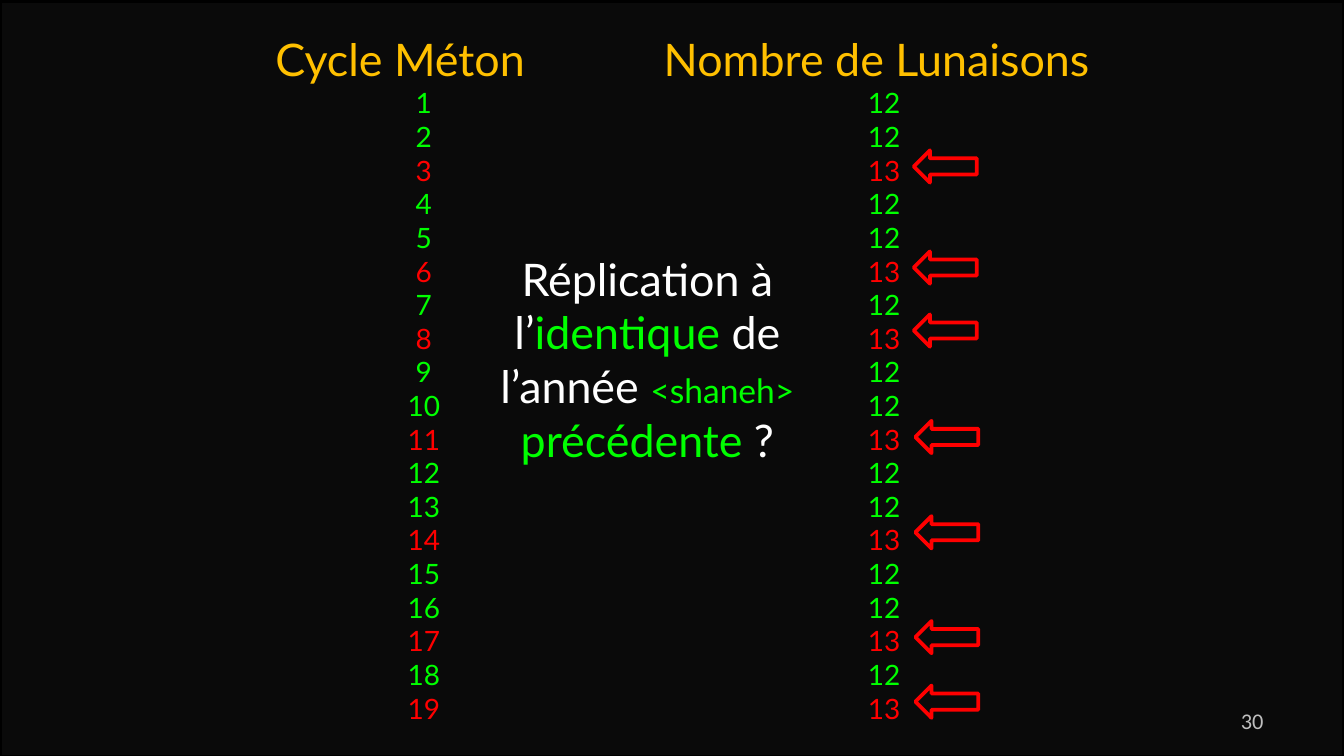
"""Build the slide comparing the Metonic cycle years with their number of lunations."""
import dataclasses
import typing

import lxml.etree
import pptx
import pptx.dml.color
import pptx.enum.shapes
import pptx.enum.text
import pptx.oxml.ns
import pptx.util

Cm = pptx.util.Cm
Pt = pptx.util.Pt
Align = pptx.enum.text.PP_ALIGN
Anchor = pptx.enum.text.MSO_ANCHOR
Preset = pptx.enum.shapes.MSO_SHAPE


@dataclasses.dataclass(frozen=True)
class Theme:
    """Colours, fonts and type sizes of the slide."""

    backdrop: str = "0A0A0A"
    border: str = "000000"
    heading: str = "FFC000"
    common: str = "00FF00"
    leap: str = "FF0000"
    question: str = "FFFFFF"
    number: str = "BFBFBF"
    font: str = "Lato"
    number_font: str = "Calibri"
    large: int = 24
    medium: int = 18
    row: int = 15
    small: int = 12
    line: int = 2


class Frame(typing.NamedTuple):
    """Position and size in centimetres."""

    left: float
    top: float
    width: float
    height: float


class Span(typing.NamedTuple):
    """A piece of text with one look."""

    text: str
    size: int
    colour: str
    font: str


class Column(typing.NamedTuple):
    """A headed list with one value per year."""

    heading: str
    frame: Frame
    values: list[int]


class Arrow(typing.NamedTuple):
    """A marker beside a leap year."""

    year: int
    left: float
    top: float


THEME = Theme()
ARROWS = [
    Arrow(3, 17.27, 2.84),
    Arrow(6, 17.27, 4.75),
    Arrow(8, 17.27, 5.94),
    Arrow(11, 17.3, 7.95),
    Arrow(14, 17.3, 9.75),
    Arrow(17, 17.3, 11.73),
    Arrow(19, 17.3, 12.95),
]
LEAP_YEARS = {arrow.year for arrow in ARROWS}
YEARS = list(range(1, 20))
COLUMNS = [
    Column("Cycle Méton", Frame(4.95, 0.48, 6.12, 13.46), YEARS),
    Column(
        "Nombre de Lunaisons",
        Frame(12.29, 0.48, 8.84, 13.46),
        [13 if year in LEAP_YEARS else 12 for year in YEARS],
    ),
]
QUESTION = [
    Span("Réplication à l’", THEME.large, THEME.question, THEME.font),
    Span("identique", THEME.large, THEME.common, THEME.font),
    Span(" de l’année ", THEME.large, THEME.question, THEME.font),
    Span("<shaneh> ", THEME.medium, THEME.common, THEME.font),
    Span("précédente", THEME.large, THEME.common, THEME.font),
    Span(" ?", THEME.large, THEME.question, THEME.font),
]


def apply(target: typing.Any, values: dict[str, typing.Any]) -> None:
    """Set every named attribute of the target."""
    for name, value in values.items():
        setattr(target, name, value)


def rgb(colour: str) -> pptx.dml.color.RGBColor:
    """Turn a hexadecimal colour into an RGB value."""
    return pptx.dml.color.RGBColor.from_string(colour)


def place(box: typing.Any, frame: Frame, anchor: Anchor = Anchor.TOP) -> None:
    """Position a text shape and prepare its text frame."""
    apply(box, {name: Cm(value) for name, value in frame._asdict().items()})
    apply(box.text_frame, {
        "word_wrap": True,
        "auto_size": pptx.enum.text.MSO_AUTO_SIZE.NONE,
        "vertical_anchor": anchor,
    })


def write(para: typing.Any, spans: list[Span], alignment: Align) -> None:
    """Fill a paragraph with spans, without bullet or indent."""
    apply(para, {"alignment": alignment, "space_before": Pt(0), "line_spacing": 1.0})
    properties = para._p.get_or_add_pPr()
    properties.set("marL", "0")
    properties.set("indent", "0")
    lxml.etree.SubElement(properties, pptx.oxml.ns.qn("a:buNone"))
    for span in spans:
        run = para.add_run()
        run.text = span.text
        apply(run.font, {"size": Pt(span.size), "name": span.font})
        run.font.color.rgb = rgb(span.colour)


def draw_shape(page: typing.Any, preset: Preset, frame: Frame, line: str) -> typing.Any:
    """Add an unfilled outlined shape."""
    shape = page.shapes.add_shape(preset, *map(Cm, frame))
    shape.shadow.inherit = False
    shape.fill.background()
    shape.line.color.rgb = rgb(line)
    shape.line.width = Pt(THEME.line)
    return shape


def draw_backdrop(page: typing.Any) -> None:
    """Add the dark panel behind everything else."""
    panel = draw_shape(page, Preset.RECTANGLE, Frame(0, 0.02, 25.4, 14.28), THEME.border)
    panel.fill.solid()
    panel.fill.fore_color.rgb = rgb(THEME.backdrop)
    page.shapes._spTree.insert(2, panel._element)


def draw_column(box: typing.Any, column: Column) -> None:
    """Write a heading and its coloured yearly values."""
    place(box, column.frame)
    heading = Span(column.heading, THEME.large, THEME.heading, THEME.font)
    write(box.text_frame.paragraphs[0], [heading], Align.LEFT)
    for year, value in zip(YEARS, column.values):
        colour = THEME.leap if year in LEAP_YEARS else THEME.common
        span = Span(str(value), THEME.row, colour, THEME.font)
        write(box.text_frame.add_paragraph(), [span], Align.CENTER)


def draw_number(page: typing.Any, number: int) -> None:
    """Add the page number at the bottom right."""
    frame = Frame(18.21, 13.23, 5.92, 0.76)
    box = page.shapes.add_textbox(*map(Cm, frame))
    place(box, frame, Anchor.MIDDLE)
    span = Span(str(number), THEME.small, THEME.number, THEME.number_font)
    write(box.text_frame.paragraphs[0], [span], Align.RIGHT)


def main() -> None:
    """Assemble and save the deck."""
    deck = pptx.Presentation()
    apply(deck, {"slide_width": Cm(25.4), "slide_height": Cm(14.28)})
    page = deck.slides.add_slide(deck.slide_layouts.get_by_name("Two Content"))
    title, *bodies = page.placeholders
    draw_backdrop(page)
    place(title, Frame(8.59, 4.62, 7.29, 4.37))
    write(title.text_frame.paragraphs[0], QUESTION, Align.CENTER)
    for box, column in zip(bodies, COLUMNS):
        draw_column(box, column)
    for arrow in ARROWS:
        frame = Frame(arrow.left, arrow.top, 1.19, 0.61)
        draw_shape(page, Preset.LEFT_ARROW, frame, THEME.leap)
    draw_number(page, 30)
    deck.save("out.pptx")


if __name__ == "__main__":
    main()
